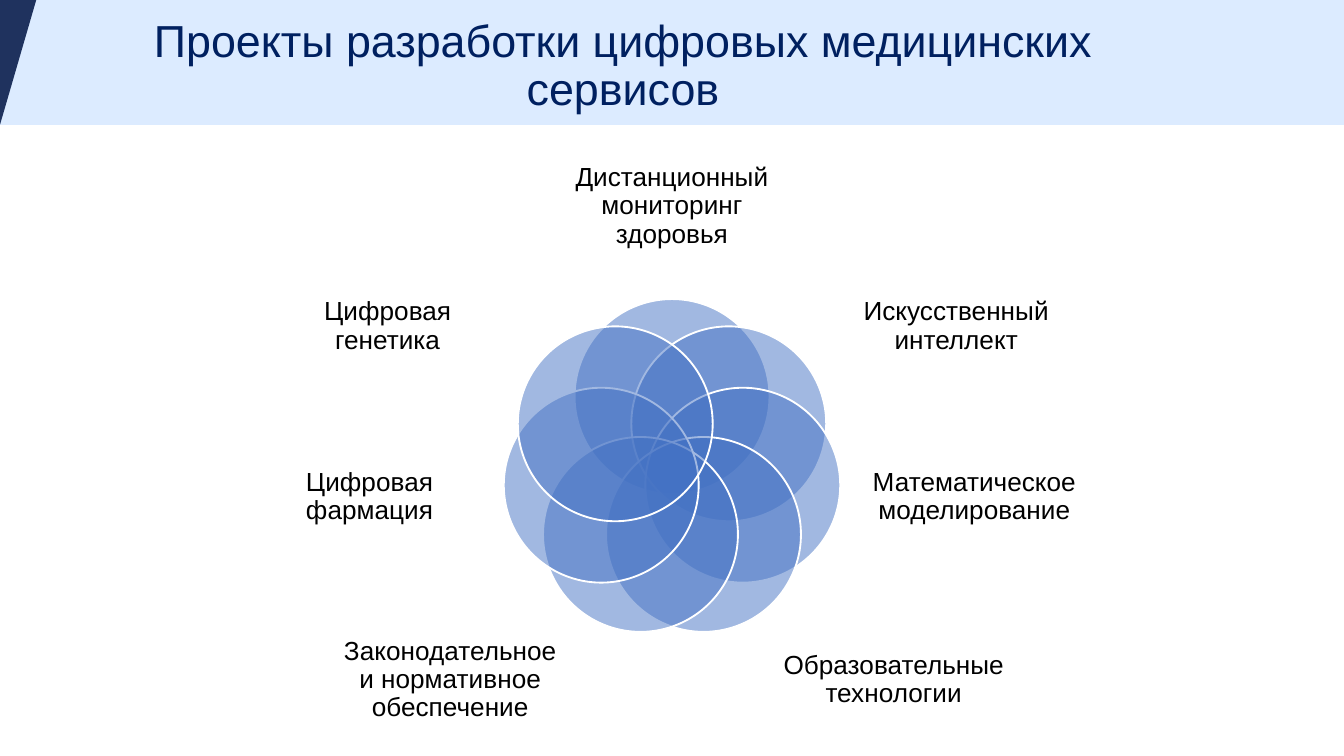
import math
from dataclasses import dataclass

import lxml.etree
import pptx
import pptx.dml.color
import pptx.enum.shapes
import pptx.enum.text
import pptx.oxml.ns
import pptx.util

Inches = pptx.util.Inches
Pt = pptx.util.Pt

SLIDE_WIDTH = 10
SLIDE_HEIGHT = SLIDE_WIDTH * 9 / 16
RING_X, RING_Y, RING_RADIUS = 5.0, 3.49, 0.54
DIAMETER = 1.45


@dataclass
class Petal:
    text: str
    left: float
    top: float
    width: float
    height: float


PETALS = [
    Petal("Дистанционный мониторинг здоровья", 4.17, 1.09, 1.66, 0.89),
    Petal("Искусственный интеллект", 6.33, 1.94, 1.57, 0.98),
    Petal("Математическое моделирование", 6.48, 3.18, 1.54, 1.04),
    Petal("Образовательные технологии", 5.82, 4.58, 1.66, 0.96),
    Petal("Законодательное и нормативное обеспечение", 2.52, 4.58, 1.66, 0.96),
    Petal("Цифровая фармация", 1.98, 3.18, 1.54, 1.04),
    Petal("Цифровая генетика", 2.1, 1.94, 1.57, 0.98),
]


def rgb(value: str) -> pptx.dml.color.RGBColor:
    return pptx.dml.color.RGBColor.from_string(value)


def paint(sp, color: str) -> None:
    sp.shadow.inherit = False
    sp.fill.solid()
    sp.fill.fore_color.rgb = rgb(color)
    sp.line.fill.background()


def write(tf, text: str, size: int, color: str) -> None:
    tf.word_wrap = True
    p = tf.paragraphs[0]
    p.text = text
    p.alignment = pptx.enum.text.PP_ALIGN.CENTER
    p.line_spacing = 0.9
    p.font.name = "Arial"
    p.font.size = Pt(size)
    p.font.color.rgb = rgb(color)


def draw_header(s) -> None:
    band = s.shapes.add_shape(pptx.enum.shapes.MSO_SHAPE.RECTANGLE,
                              0, 0, Inches(SLIDE_WIDTH), Inches(0.93))
    paint(band, "DCEBFF")
    builder = s.shapes.build_freeform(0, 0)
    builder.add_line_segments([(Inches(0.27), 0), (0, Inches(0.93))])
    paint(builder.convert_to_shape(), "1F325E")


def draw_title(s) -> None:
    title = s.shapes.title
    title.left, title.top = Inches(0.69), Inches(0.09)
    title.width, title.height = Inches(7.89), Inches(0.5)
    tf = title.text_frame
    tf.auto_size = pptx.enum.text.MSO_AUTO_SIZE.NONE
    tf.vertical_anchor = pptx.enum.text.MSO_ANCHOR.TOP
    write(tf, "Проекты разработки цифровых медицинских сервисов", 24, "002060")
    s.shapes._spTree.append(title._element)


def draw_circle(s, angle: float) -> None:
    x = RING_X + RING_RADIUS * math.sin(angle) - DIAMETER / 2
    y = RING_Y - RING_RADIUS * math.cos(angle) - DIAMETER / 2
    sp = s.shapes.add_shape(pptx.enum.shapes.MSO_SHAPE.OVAL, Inches(x), Inches(y),
                            Inches(DIAMETER), Inches(DIAMETER))
    paint(sp, "4472C4")
    qn = pptx.oxml.ns.qn
    color = sp._element.spPr.find(qn("a:solidFill")).find(qn("a:srgbClr"))
    lxml.etree.SubElement(color, qn("a:alpha"), val="50000")
    sp.line.color.rgb = rgb("FFFFFF")
    sp.line.width = Pt(1)


def draw_label(s, petal: Petal) -> None:
    sp = s.shapes.add_textbox(Inches(petal.left), Inches(petal.top),
                              Inches(petal.width), Inches(petal.height))
    tf = sp.text_frame
    tf.margin_left = tf.margin_right = tf.margin_top = tf.margin_bottom = 0
    tf.vertical_anchor = pptx.enum.text.MSO_ANCHOR.MIDDLE
    write(tf, petal.text, 14, "000000")


def main() -> None:
    prs = pptx.Presentation()
    prs.slide_width, prs.slide_height = Inches(SLIDE_WIDTH), Inches(SLIDE_HEIGHT)
    s = prs.slides.add_slide(prs.slide_layouts[5])
    draw_header(s)
    for i, petal in enumerate(PETALS):
        draw_circle(s, 2 * math.pi * i / len(PETALS))
        draw_label(s, petal)
    draw_title(s)
    prs.save("out.pptx")


if __name__ == "__main__":
    main()
